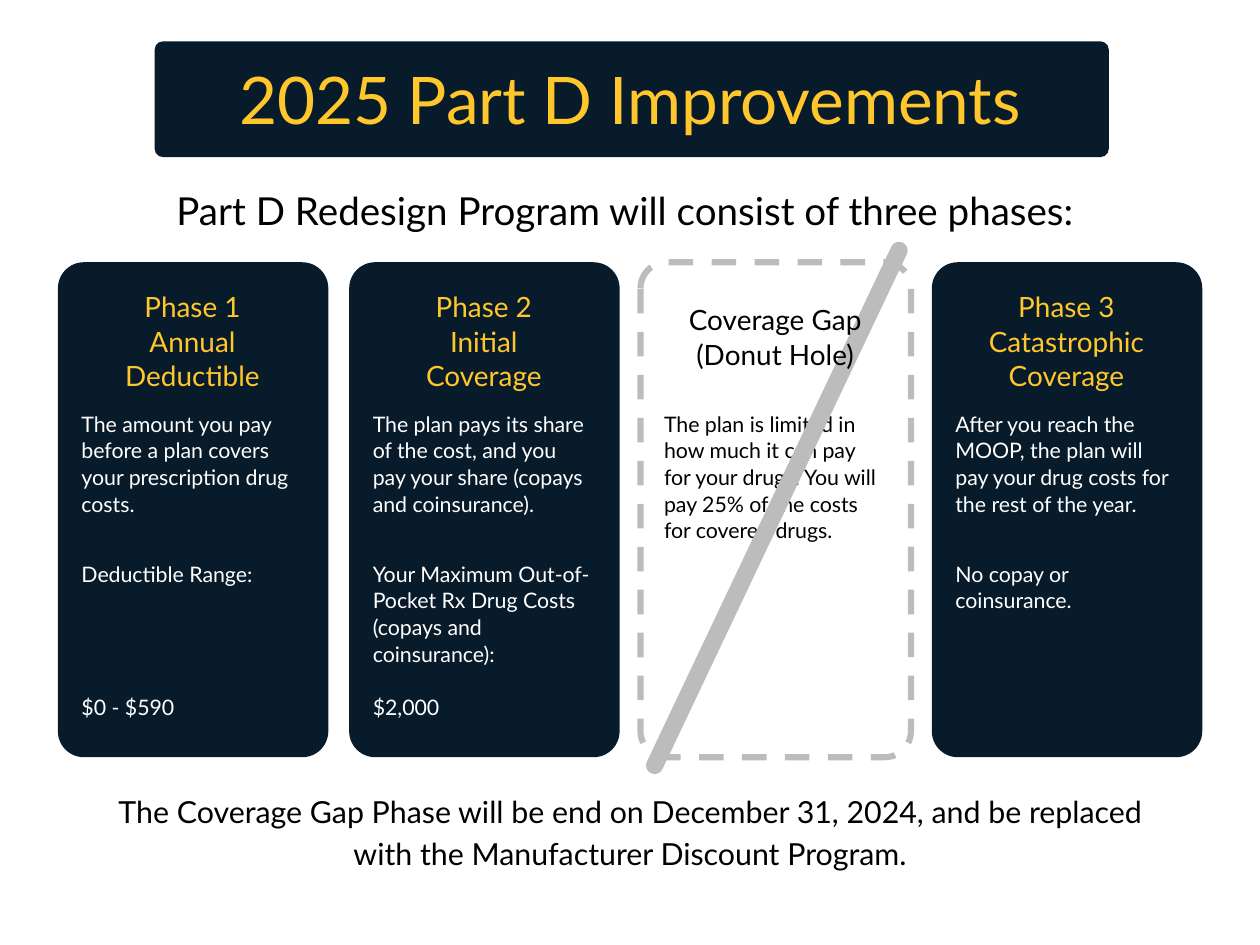
from lxml.etree import SubElement
from pptx import Presentation
from pptx.dml.color import RGBColor
from pptx.enum.dml import MSO_LINE
from pptx.enum.shapes import MSO_CONNECTOR, MSO_SHAPE
from pptx.enum.text import PP_ALIGN
from pptx.oxml.ns import qn
from pptx.util import Inches, Pt

NAVY, GOLD, GREY, WHITE, BLACK = "081B2B", "FFC72C", "BDBCBC", "FFFFFF", "000000"
WIDTH, HEIGHT = 10.67, 8
CARD_LEFT, CARD_TOP, CARD_W, CARD_H, CARD_PITCH = 0.49, 2.22, 2.29, 4.19, 2.467
PAD, TEXT_W, BODY_W = 0.2, 1.88, 1.84
HEADING_TOP, BODY_TOP, DETAIL_TOP = 2.44, 3.47, 4.74
BODY_LINE, HEADING_LINE = 16.2, 21.2

TITLE = "2025 Part D Improvements"
INTRO = "Part D Redesign Program will consist of three phases:"
CLOSING = ("The Coverage Gap Phase will be end on December 31, 2024, and be replaced "
           "with the Manufacturer Discount Program.")
PHASES = [
    dict(heading=["Phase 1", "Annual Deductible"],
         body="The amount you pay before a plan covers your prescription drug costs.",
         detail=["Deductible Range:", "$0 - $590"], skipped_lines=4),
    dict(heading=["Phase 2", "Initial", "Coverage"],
         body="The plan pays its share of the cost, and you pay your share "
              "(copays and coinsurance).",
         detail=["Your Maximum Out-of-Pocket Rx Drug Costs (copays and coinsurance):",
                 "$2,000"], skipped_lines=1),
    dict(heading=["Coverage Gap", "(Donut Hole)"],
         body="The plan is limited in how much it can pay for your drugs. "
              "You will pay 25% of the costs for covered drugs.",
         removed=True),
    dict(heading=["Phase 3", "Catastrophic Coverage"],
         body="After you reach the MOOP, the plan will pay your drug costs "
              "for the rest of the year.",
         detail=["No copay or coinsurance."]),
]


def rgb(value):
    return RGBColor.from_string(value)


def add_text(s, paragraphs, x, y, w, h, size=13, color=BLACK, line=BODY_LINE,
             align=PP_ALIGN.LEFT, gap=0):
    tf = s.shapes.add_textbox(Inches(x), Inches(y), Inches(w), Inches(h)).text_frame
    tf.word_wrap = True
    tf.margin_left = tf.margin_right = tf.margin_top = tf.margin_bottom = 0
    for i, text in enumerate(paragraphs):
        p = tf.paragraphs[0] if i == 0 else tf.add_paragraph()
        p.alignment, p.line_spacing = align, Pt(line)
        if i and gap:
            p.space_before = Pt(gap)
        r = p.add_run()
        r.text = text
        r.font.name, r.font.size = "Lato", Pt(size)
        r.font.color.rgb = rgb(color)


def add_panel(s, x, y, w, h, radius, dashed=False):
    sp = s.shapes.add_shape(MSO_SHAPE.ROUNDED_RECTANGLE,
                            Inches(x), Inches(y), Inches(w), Inches(h))
    sp.adjustments[0] = radius / min(w, h)
    sp.shadow.inherit = False
    if dashed:
        sp.fill.background()
        sp.line.color.rgb = rgb(GREY)
        sp.line.width = Pt(3.75)
        sp.line.dash_style = MSO_LINE.DASH
    else:
        sp.fill.solid()
        sp.fill.fore_color.rgb = rgb(NAVY)
        sp.line.fill.background()


def add_strike(s, x):
    strike = s.shapes.add_connector(MSO_CONNECTOR.STRAIGHT, Inches(x + 0.12), Inches(6.48),
                                    Inches(x + 2.19), Inches(2.12))
    strike.line.color.rgb = rgb(GREY)
    strike.line.width = Pt(10.5)
    strike.line._ln.set("cap", "rnd")
    SubElement(strike._element.spPr, qn("a:effectLst"))


def add_phase(s, phase, x):
    removed = phase.get("removed", False)
    add_panel(s, x, CARD_TOP, CARD_W, CARD_H, 0.22, dashed=removed)
    left = x + PAD
    color = BLACK if removed else WHITE
    add_text(s, [phase["body"]], left, BODY_TOP, BODY_W, 1.11, color=color)
    if "detail" in phase:
        add_text(s, phase["detail"], left, DETAIL_TOP, TEXT_W, 1.32, color=color,
                 gap=phase.get("skipped_lines", 0) * BODY_LINE)
    if removed:
        add_strike(s, x)
    add_text(s, phase["heading"], left, HEADING_TOP + (0.11 if removed else 0), TEXT_W, 0.87,
             size=17, color=BLACK if removed else GOLD, line=HEADING_LINE,
             align=PP_ALIGN.CENTER)


def main():
    prs = Presentation()
    prs.slide_width, prs.slide_height = Inches(WIDTH), Inches(HEIGHT)
    s = prs.slides.add_slide(prs.slide_layouts[6])
    add_panel(s, 1.31, 0.35, 8.08, 0.98, 0.07)
    add_text(s, [TITLE], 1, 0.39, 8.67, 0.74, size=40, color=GOLD, line=56,
             align=PP_ALIGN.CENTER)
    add_text(s, [INTRO], 0.76, 1.52, 9.07, 0.42, size=23.5, line=32.9,
             align=PP_ALIGN.CENTER)
    for i, phase in enumerate(PHASES):
        add_phase(s, phase, CARD_LEFT + i * CARD_PITCH)
    add_text(s, [CLOSING], 0.8, 6.66, 9.07, 0.69, size=18.5, line=25.9,
             align=PP_ALIGN.CENTER)
    prs.save("out.pptx")


if __name__ == "__main__":
    main()
